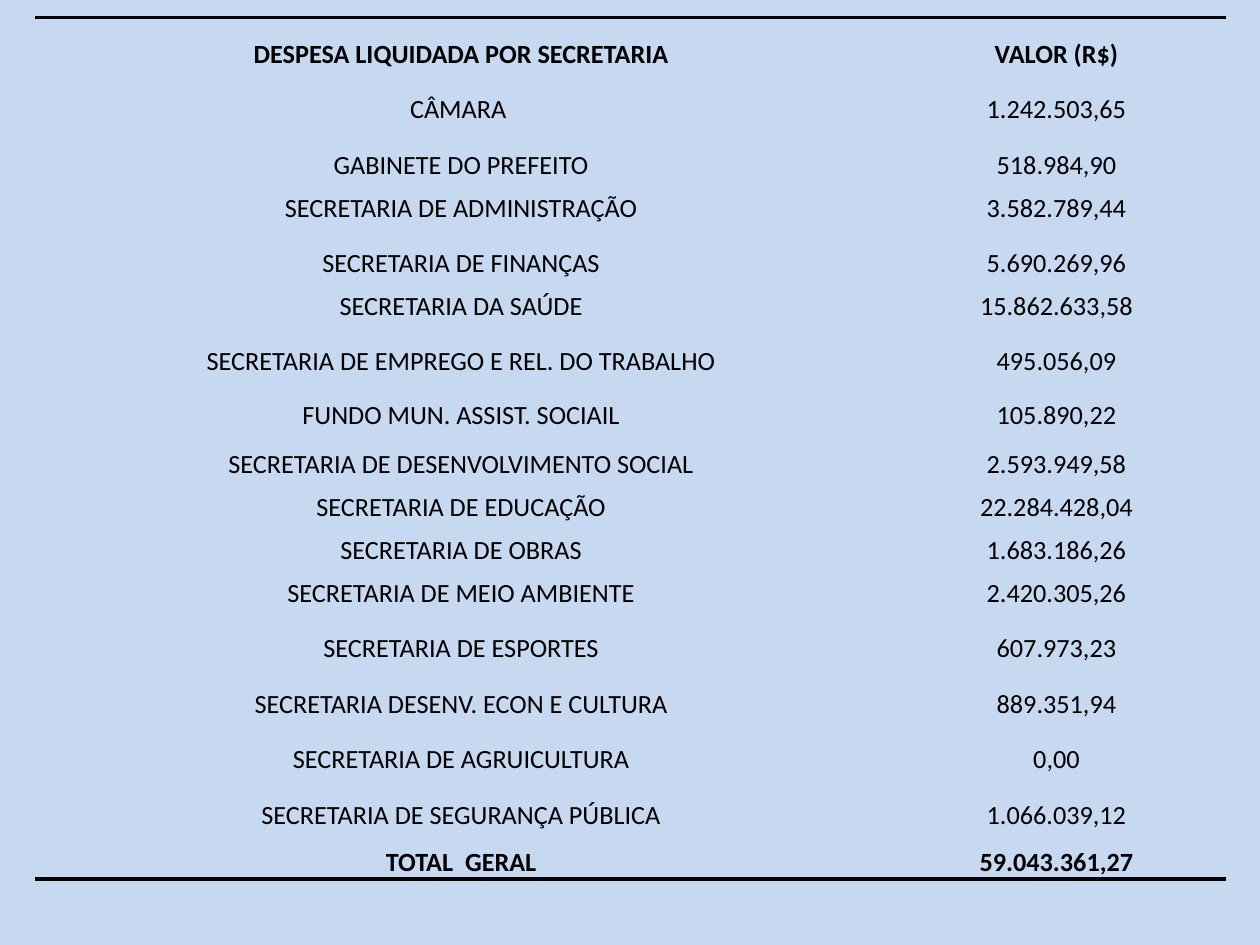
from dataclasses import dataclass

from lxml.etree import SubElement
from pptx import Presentation
from pptx.dml.color import RGBColor
from pptx.enum.text import MSO_ANCHOR, PP_ALIGN
from pptx.oxml.ns import qn
from pptx.util import Inches, Pt

# Content: department, value, row height in inches
TALL, SHORT = 0.44, 0.34
ROWS = [
    ("DESPESA LIQUIDADA POR SECRETARIA", "VALOR (R$)", 0.42),
    ("CÂMARA ", "1.242.503,65", TALL),
    ("GABINETE DO PREFEITO", "518.984,90", TALL),
    ("SECRETARIA DE ADMINISTRAÇÃO", "3.582.789,44", SHORT),
    ("SECRETARIA DE FINANÇAS", "5.690.269,96", TALL),
    ("SECRETARIA DA SAÚDE", "15.862.633,58", SHORT),
    ("SECRETARIA DE EMPREGO E REL. DO TRABALHO", "495.056,09", TALL),
    ("FUNDO MUN. ASSIST. SOCIAIL", "105.890,22", 0.43),
    ("SECRETARIA DE DESENVOLVIMENTO SOCIAL", "2.593.949,58", 0.39),
    ("SECRETARIA DE EDUCAÇÃO", "22.284.428,04", SHORT),
    ("SECRETARIA DE OBRAS", "1.683.186,26", SHORT),
    ("SECRETARIA DE MEIO AMBIENTE", "2.420.305,26", SHORT),
    ("SECRETARIA DE ESPORTES", "607.973,23", TALL),
    ("SECRETARIA DESENV. ECON E CULTURA", "889.351,94", TALL),
    ("SECRETARIA DE AGRUICULTURA", "0,00", TALL),
    ("SECRETARIA DE SEGURANÇA PÚBLICA", "1.066.039,12", TALL),
    ("TOTAL  GERAL", "59.043.361,27", 0.38),
]
COLUMN_WIDTHS = (6.76, 2.69)
LEFT, TOP = 0.28, 0.14
SIDE_MARGIN = 0.01


@dataclass(frozen=True)
class Theme:
    background: str = "C6D9F1"
    ink: str = "000000"
    font: str = "Calibri"
    text_size: int = 15
    rule_width: int = 2


THEME = Theme()


def set_solid(fill, color):
    fill.solid()
    fill.fore_color.rgb = RGBColor.from_string(color)


def write_text(cell, text, bold=False, size=THEME.text_size, color=THEME.ink):
    cell.vertical_anchor = MSO_ANCHOR.BOTTOM
    cell.margin_left = cell.margin_right = cell.margin_top = Inches(SIDE_MARGIN)
    cell.margin_bottom = 0
    paragraph = cell.text_frame.paragraphs[0]
    paragraph.alignment = PP_ALIGN.CENTER
    run = paragraph.add_run()
    run.text = text
    run.font.name = THEME.font
    run.font.size = Pt(size)
    run.font.bold = bold
    run.font.color.rgb = RGBColor.from_string(color)


def set_borders(cell, ruled_sides):
    """Rule the named sides and clear the others; call before filling the cell."""
    properties = cell._tc.get_or_add_tcPr()
    for side in "LRTB":
        line = SubElement(properties, qn(f"a:ln{side}"))
        if side in ruled_sides:
            line.set("w", str(Pt(THEME.rule_width)))
            solid = SubElement(line, qn("a:solidFill"))
            SubElement(solid, qn("a:srgbClr")).set("val", THEME.ink)
        else:
            SubElement(line, qn("a:noFill"))


def build_expense_table(slide):
    heights = [row[-1] for row in ROWS]
    table = slide.shapes.add_table(
        len(ROWS), len(COLUMN_WIDTHS), Inches(LEFT), Inches(TOP),
        Inches(sum(COLUMN_WIDTHS)), Inches(sum(heights))).table
    table.first_row = table.horz_banding = False
    for column, width in zip(table.columns, COLUMN_WIDTHS):
        column.width = Inches(width)

    # Header and total are bold, with a rule on the outer edge
    outer_edges = {0: "T", len(ROWS) - 1: "B"}
    for index, (*texts, height) in enumerate(ROWS):
        table.rows[index].height = Inches(height)
        for column, text in enumerate(texts):
            cell = table.cell(index, column)
            write_text(cell, text, bold=index in outer_edges)
            set_borders(cell, outer_edges.get(index, ""))
            set_solid(cell.fill, THEME.background)


def main():
    presentation = Presentation()
    presentation.slide_width, presentation.slide_height = Inches(10), Inches(7.5)
    slide = presentation.slides.add_slide(presentation.slide_layouts[6])
    set_solid(slide.background.fill, THEME.background)
    build_expense_table(slide)
    presentation.save("out.pptx")


if __name__ == "__main__":
    main()
